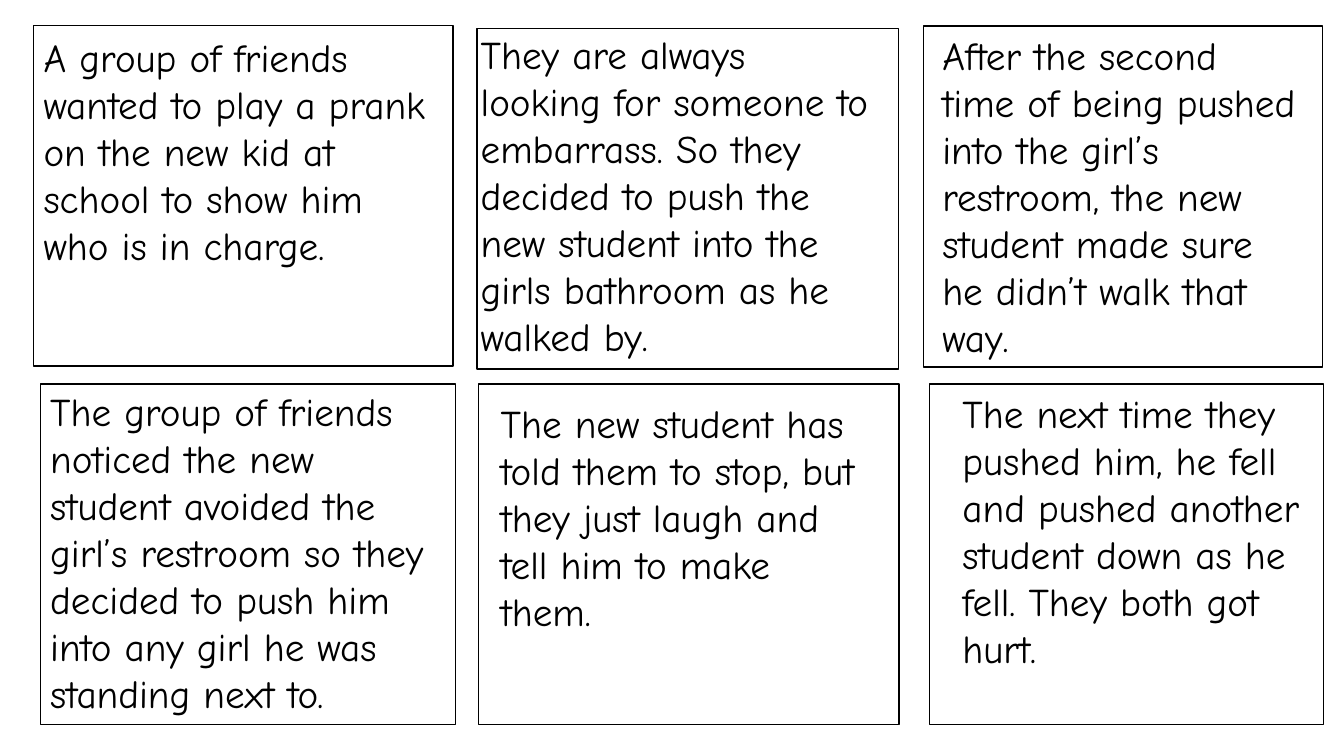
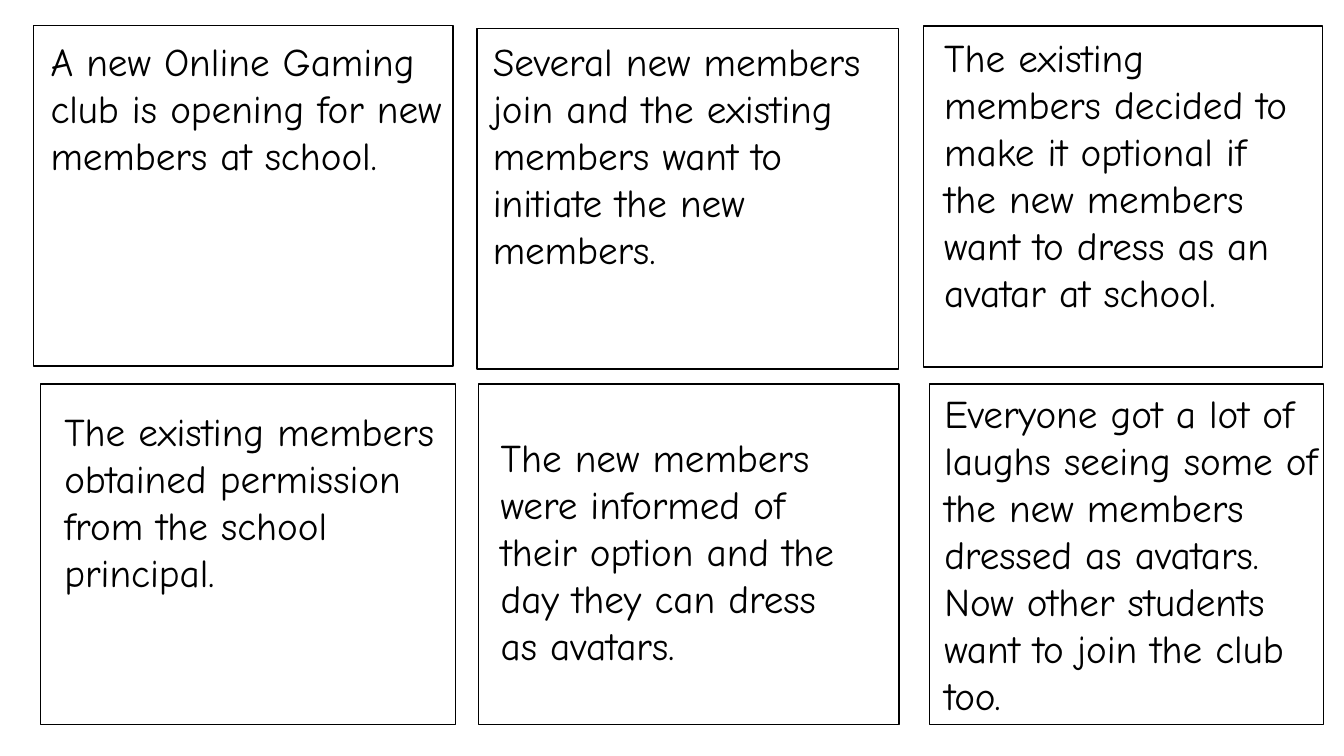
from pptx import Presentation
from pptx import util as u
from pptx.dml import color
from pptx.enum import shapes, text

COLOURS = {"paper": "FFFFFF", "ink": "000000"}
FONT = "Comic Neue"
FONT_SIZE = 28
PANEL_HEIGHT = 243.4

# Storyboard panels in reading order: left, top, width
PANELS = [
    (24, 18, 299.5), (340.6, 20.2, 301), (659.5, 18.7, 285.1),
    (28.8, 274.3, 296.6), (342, 274.3, 300.2), (663.8, 274.3, 281.5),
]

# One caption per panel: offset from the panel's corner, width, height, wording
PRANK_STORY = [
    (0, 2.2, 294.5, 177,
     "A group of friends wanted to play a prank on the new kid at school "
     "to show him who is in charge."),
    (-4.3, -2.2, 294.5, 245,
     "They are always looking for someone to embarrass. So they decided to "
     "push the new student into the girls bathroom as he walked by."),
    (6.5, 0, 270.7, 278.6,
     "After the second time of being pushed into the girl’s restroom, the "
     "new student made sure he didn’t walk that way."),
    (0, -1.4, 297.4, 245,
     "The group of friends noticed the new student avoided the girl’s "
     "restroom so they decided to push him into any girl he was standing "
     "next to."),
    (8.6, 7.2, 270.7, 177,
     "The new student has told them to stop, but they just laugh and tell "
     "him to make them."),
    (16.6, 0, 258.5, 245,
     "The next time they pushed him, he fell and pushed another student "
     "down as he fell. They both got hurt."),
]
CLUB_STORY = [
    (5, 5, 294.5, 143,
     "A new Online Gaming club is opening for new members at school."),
    (4.3, 2.9, 294.5, 211,
     "Several new members join and the existing members want to initiate "
     "the new members."),
    (7.9, 1.4, 270.7, 278.6,
     "The existing members decided to make it optional if the new members "
     "want to dress as an avatar at school."),
    (10.1, 13, 302.4, 143,
     "The existing members obtained permission from the school principal."),
    (8.6, 31.7, 270.7, 177,
     "The new members were informed of their option and the day they can "
     "dress as avatars."),
    (3.6, 0, 286.6, 245,
     "Everyone got a lot of laughs seeing some of the new members dressed "
     "as avatars. Now other students want to join the club too."),
]


def rgb(name):
    return color.RGBColor.from_string(COLOURS[name])


def add_panel(slide, left, top, width):
    """Draw one outlined storyboard frame."""
    panel = slide.shapes.add_shape(
        shapes.MSO_SHAPE.RECTANGLE,
        u.Pt(left), u.Pt(top), u.Pt(width), u.Pt(PANEL_HEIGHT))
    panel.shadow.inherit = False
    panel.fill.solid()
    panel.fill.fore_color.rgb = rgb("paper")
    panel.line.color.rgb = rgb("ink")
    panel.line.width = u.Pt(1)


def add_caption(slide, panel, caption):
    """Place a caption relative to its panel's top left corner."""
    left, top, _ = panel
    across, down, width, height, wording = caption
    box = slide.shapes.add_textbox(
        u.Pt(left + across), u.Pt(top + down), u.Pt(width), u.Pt(height))
    frame = box.text_frame
    frame.word_wrap = True
    frame.auto_size = text.MSO_AUTO_SIZE.SHAPE_TO_FIT_TEXT
    run = frame.paragraphs[0].add_run()
    run.text = wording
    run.font.name = FONT
    run.font.size = u.Pt(FONT_SIZE)
    run.font.color.rgb = rgb("ink")


def add_storyboard(presentation, story):
    slide = presentation.slides.add_slide(presentation.slide_layouts[6])
    # Frames first, so that captions lie on top
    for panel in PANELS:
        add_panel(slide, *panel)
    for panel, caption in zip(PANELS, story):
        add_caption(slide, panel, caption)


def main():
    presentation = Presentation()
    presentation.slide_width = u.Pt(960)
    presentation.slide_height = u.Pt(540)
    for story in (PRANK_STORY, CLUB_STORY):
        add_storyboard(presentation, story)
    presentation.save("out.pptx")


if __name__ == "__main__":
    main()
